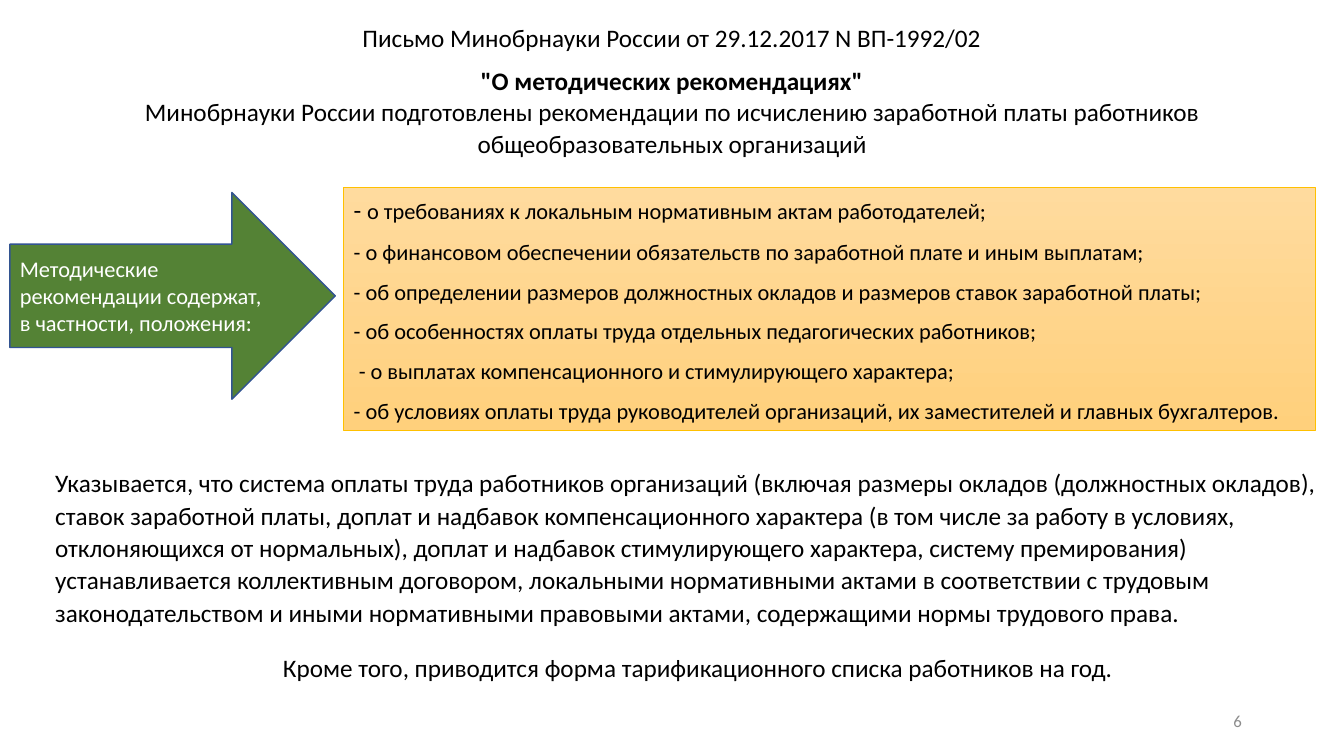
from pptx import Presentation
from pptx.dml.color import RGBColor
from pptx.enum.shapes import MSO_SHAPE
from pptx.enum.text import MSO_ANCHOR, MSO_AUTO_SIZE, PP_ALIGN
from pptx.util import Cm, Pt
from lxml.etree import SubElement
from pptx.oxml.ns import qn


def tint(code):
    return RGBColor.from_string(code)


class Page:
    font = "Calibri"
    ink = "000000"

    def __init__(self, deck):
        self.slide = deck.slides.add_slide(deck.slide_layouts[1])

    def place(self, shape, box):
        shape.left, shape.top, shape.width, shape.height = map(Cm, box)

    def label(self, shape, paras, size=18, ink=None, align=PP_ALIGN.LEFT,
              anchor=MSO_ANCHOR.TOP, lead=1.07, after=8):
        """Each paragraph is a list of (text, changes) runs."""
        frame = shape.text_frame
        frame.word_wrap = True
        frame.auto_size = MSO_AUTO_SIZE.NONE
        frame.vertical_anchor = anchor
        for i, runs in enumerate(paras):
            para = frame.paragraphs[0] if i == 0 else frame.add_paragraph()
            para.alignment = align
            para.line_spacing = lead
            para.space_before, para.space_after = Pt(0), Pt(after)
            for text, style in runs:
                run = para.add_run()
                run.text = text
                run.font.name = self.font
                run.font.size = Pt(style.get("size", size))
                run.font.bold = style.get("bold", False)
                run.font.color.rgb = tint(ink or self.ink)

    def title(self, box, paras):
        shape = self.slide.shapes.title
        self.place(shape, box)
        self.label(shape, paras, align=PP_ALIGN.CENTER)

    def points(self, box, items, stops, edge):
        shape = self.slide.placeholders[1]
        self.place(shape, box)
        shape.fill.gradient()
        shape.fill.gradient_angle = 270
        for stop, code in zip(shape.fill.gradient_stops, stops):
            stop.color.rgb = tint(code)
        shape.line.color.rgb = tint(edge)
        shape.line.width = Pt(0.5)
        self.label(shape, items, size=16)
        # Dashes are typed, so bullets and hanging indents go
        for para in shape.text_frame.paragraphs:
            props = para._p.get_or_add_pPr()
            props.set("marL", "0")
            props.set("indent", "0")
            SubElement(props, qn("a:buNone"))

    def text(self, box, words, **style):
        shape = self.slide.shapes.add_textbox(*map(Cm, box))
        self.label(shape, [[(words, {})]], **style)

    def arrow(self, box, words, fill, edge):
        shape = self.slide.shapes.add_shape(MSO_SHAPE.RIGHT_ARROW, *map(Cm, box))
        shape.shadow.inherit = False
        shape.fill.solid()
        shape.fill.fore_color.rgb = tint(fill)
        shape.line.color.rgb = tint(edge)
        shape.line.width = Pt(1)
        self.label(shape, [[(words, {})]], size=16, ink="FFFFFF",
                   anchor=MSO_ANCHOR.MIDDLE, lead=1.0, after=0)


def main():
    deck = Presentation()
    deck.slide_width, deck.slide_height = Cm(33.87), Cm(19.05)
    page = Page(deck)

    # Heading
    page.title((8.46, 0.38, 16.94, 2.18), [
        [("Письмо Минобрнауки России от 29.12.2017 N ВП-1992/02", {})],
        [('"О методических рекомендациях"', {"bold": True})],
    ])
    page.text((0.71, 2.24, 32.46, 1.9),
              "Минобрнауки России подготовлены рекомендации по исчислению "
              "заработной платы работников общеобразовательных организаций",
              align=PP_ALIGN.CENTER)

    # Arrow and the list it points to
    page.arrow((0.25, 4.85, 8.2, 5.21),
               "Методические рекомендации содержат, в частности, положения:",
               "548235", "325491")
    points = [
        "- о финансовом обеспечении обязательств по заработной плате и иным выплатам;",
        "- об определении размеров должностных окладов и размеров ставок заработной платы;",
        "- об особенностях оплаты труда отдельных педагогических работников;",
        " - о выплатах компенсационного и стимулирующего характера;",
        "- об условиях оплаты труда руководителей организаций, их заместителей "
        "и главных бухгалтеров.",
    ]
    first = [("- ", {"size": 18}),
             ("о требованиях к локальным нормативным актам работодателей;", {})]
    page.points((8.66, 4.72, 24.49, 6.12),
                [first] + [[(point, {})] for point in points],
                ("FFDB9E", "FFD07C"), "FFC000")

    # Closing text
    page.text((1.14, 11.61, 32.46, 4.37),
              "Указывается, что система оплаты труда работников организаций "
              "(включая размеры окладов (должностных окладов), ставок заработной "
              "платы, доплат и надбавок компенсационного характера (в том числе за "
              "работу в условиях, отклоняющихся от нормальных), доплат и надбавок "
              "стимулирующего характера, систему премирования) устанавливается "
              "коллективным договором, локальными нормативными актами в "
              "соответствии с трудовым законодательством и иными нормативными "
              "правовыми актами, содержащими нормы трудового права.")
    page.text((6.88, 16.26, 22.76, 1.09),
              "Кроме того, приводится форма тарификационного списка "
              "работников на год.")

    # Page number
    page.text((23.93, 17.65, 7.62, 1.02), "6", size=12, ink="8C8C8C",
              align=PP_ALIGN.RIGHT, anchor=MSO_ANCHOR.MIDDLE, lead=1.0, after=0)

    deck.save("out.pptx")


if __name__ == "__main__":
    main()
